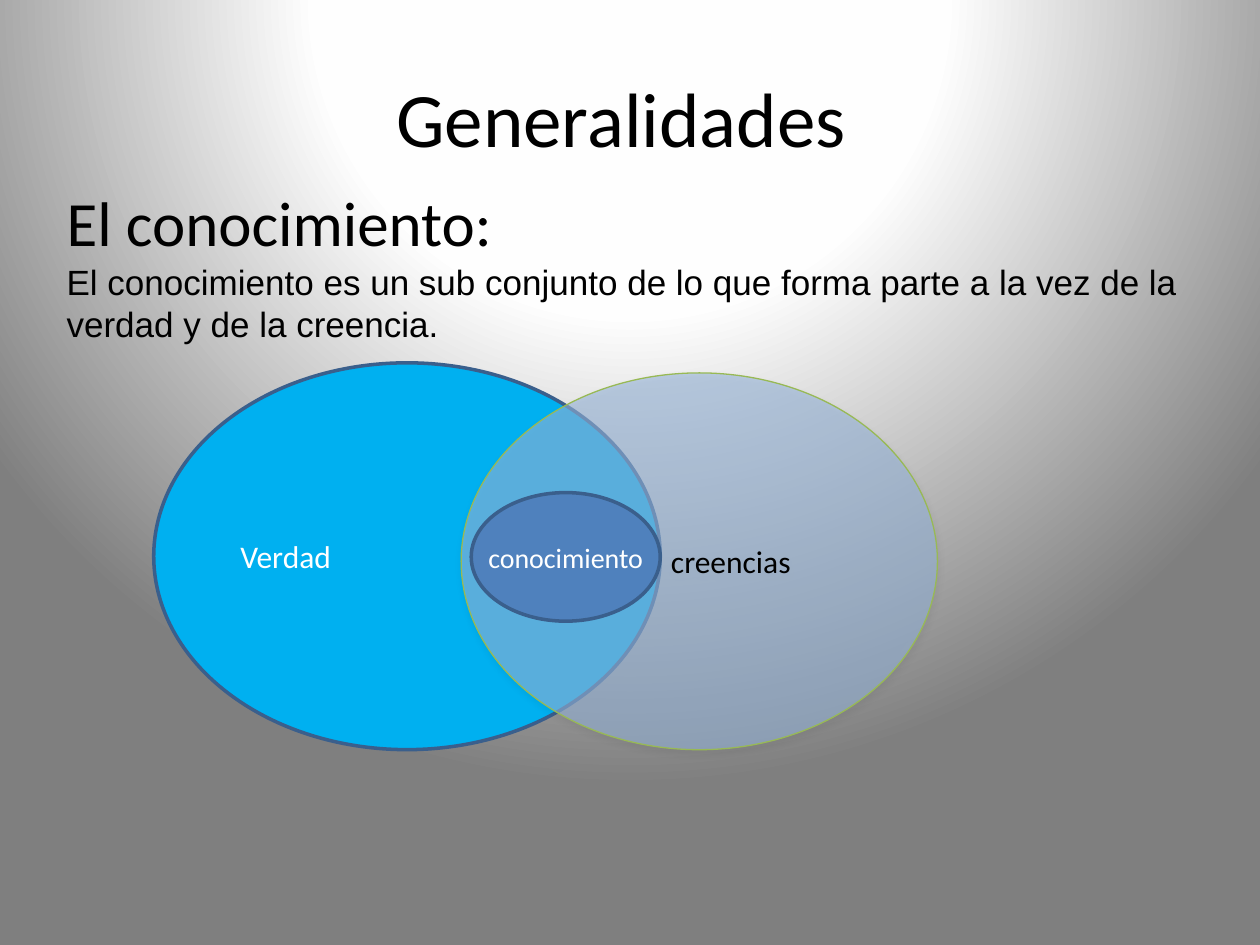
from pptx import Presentation
from pptx.dml.color import RGBColor
from pptx.enum.shapes import MSO_SHAPE
from pptx.enum.text import MSO_ANCHOR, PP_ALIGN
from pptx.oxml import parse_xml
from pptx.oxml.ns import nsdecls, qn
from pptx.util import Inches, Pt

COLORS = {
    "text": "000000",
    "light_text": "FFFFFF",
    "truth": "00B0F0",
    "belief": "95B3D7",
    "knowledge": "4F81BD",
    "blue_line": "3A5F8C",
    "green_line": "98B955",
    "shadow": "000000",
}
BACKGROUND_STOPS = [(0, "FFFFFF"), (40, "FEFEFE"), (100, "7F7F7F")]


def rgb(name):
    return RGBColor.from_string(COLORS[name])


def set_background(slide):
    stops = "".join(
        f'<a:gs pos="{pos * 1000}"><a:srgbClr val="{color}"/></a:gs>'
        for pos, color in BACKGROUND_STOPS
    )
    slide.element.cSld.insert(0, parse_xml(
        f'<p:bg {nsdecls("p", "a")}><p:bgPr>'
        f'<a:gradFill rotWithShape="1"><a:gsLst>{stops}</a:gsLst>'
        '<a:path path="circle"><a:fillToRect l="50000" t="-80000" r="50000" b="180000"/></a:path>'
        '</a:gradFill><a:effectLst/></p:bgPr></p:bg>'
    ))


def write(shape, text, size, color="text", align=PP_ALIGN.LEFT,
          font="Calibri", anchor=MSO_ANCHOR.MIDDLE):
    frame = shape.text_frame
    frame.word_wrap = True
    frame.vertical_anchor = anchor
    frame.text = text
    paragraph = frame.paragraphs[0]
    paragraph.alignment = align
    paragraph.font.name = font
    paragraph.font.size = Pt(size)
    paragraph.font.color.rgb = rgb(color)


def place(shape, box):
    shape.left, shape.top, shape.width, shape.height = map(Inches, box)


def add_text(slide, box, text, size, **style):
    textbox = slide.shapes.add_textbox(*map(Inches, box))
    write(textbox, text, size, anchor=MSO_ANCHOR.TOP, **style)


def add_ellipse(slide, box, text, fill, size=18, line="blue_line", line_width=2, **style):
    ellipse = slide.shapes.add_shape(MSO_SHAPE.OVAL, *map(Inches, box))
    ellipse.shadow.inherit = False
    ellipse.fill.solid()
    ellipse.fill.fore_color.rgb = rgb(fill)
    ellipse.line.color.rgb = rgb(line)
    ellipse.line.width = Pt(line_width)
    write(ellipse, text, size, **style)
    return ellipse


def make_translucent(shape, percent):
    color = shape.element.spPr.find(qn("a:solidFill"))[0]
    color.append(parse_xml(f'<a:alpha {nsdecls("a")} val="{percent * 1000}"/>'))


def add_shadow(shape, percent, blur, distance):
    effects = shape.element.spPr.find(qn("a:effectLst"))
    effects.append(parse_xml(
        f'<a:outerShdw {nsdecls("a")} blurRad="{Pt(blur)}" dist="{Pt(distance)}" '
        f'dir="5400000" rotWithShape="0"><a:srgbClr val="{COLORS["shadow"]}">'
        f'<a:alpha val="{percent * 1000}"/></a:srgbClr></a:outerShdw>'
    ))


def main():
    presentation = Presentation()
    presentation.slide_width, presentation.slide_height = Inches(10), Inches(7.5)
    slide = presentation.slides.add_slide(presentation.slide_layouts[5])
    set_background(slide)

    # Title and definition
    title = slide.shapes.title
    place(title, (0.5, 0.3, 9, 1.25))
    write(title, "Generalidades ", 44, align=PP_ALIGN.CENTER)
    add_text(slide, (0.43, 1.41, 8.98, 1.31), "El conocimiento: ", 36,
             align=PP_ALIGN.JUSTIFY)
    add_text(slide, (0.43, 2.02, 9.29, 0.77),
             "El conocimiento es un sub conjunto de lo que forma parte a la vez "
             "de la verdad y de la creencia.", 20, font="Arial")

    # Venn diagram: knowledge lies where truth and belief overlap
    add_ellipse(slide, (1.22, 2.88, 4.02, 3.07), "Verdad", "truth", color="light_text")
    belief = add_ellipse(slide, (3.66, 2.96, 3.78, 2.99), "creencias", "belief",
                         line="green_line", line_width=0.75, align=PP_ALIGN.CENTER)
    belief.text_frame.margin_left = Inches(0.6)
    make_translucent(belief, 60)
    add_shadow(belief, percent=8, blur=4, distance=2)
    knowledge = add_ellipse(slide, (3.74, 3.91, 1.5, 1.02), "conocimiento", "knowledge",
                            size=16, color="light_text", align=PP_ALIGN.CENTER)
    # Keep the word whole on the oval's widest line
    knowledge.text_frame.word_wrap = False

    presentation.save("out.pptx")


if __name__ == "__main__":
    main()
